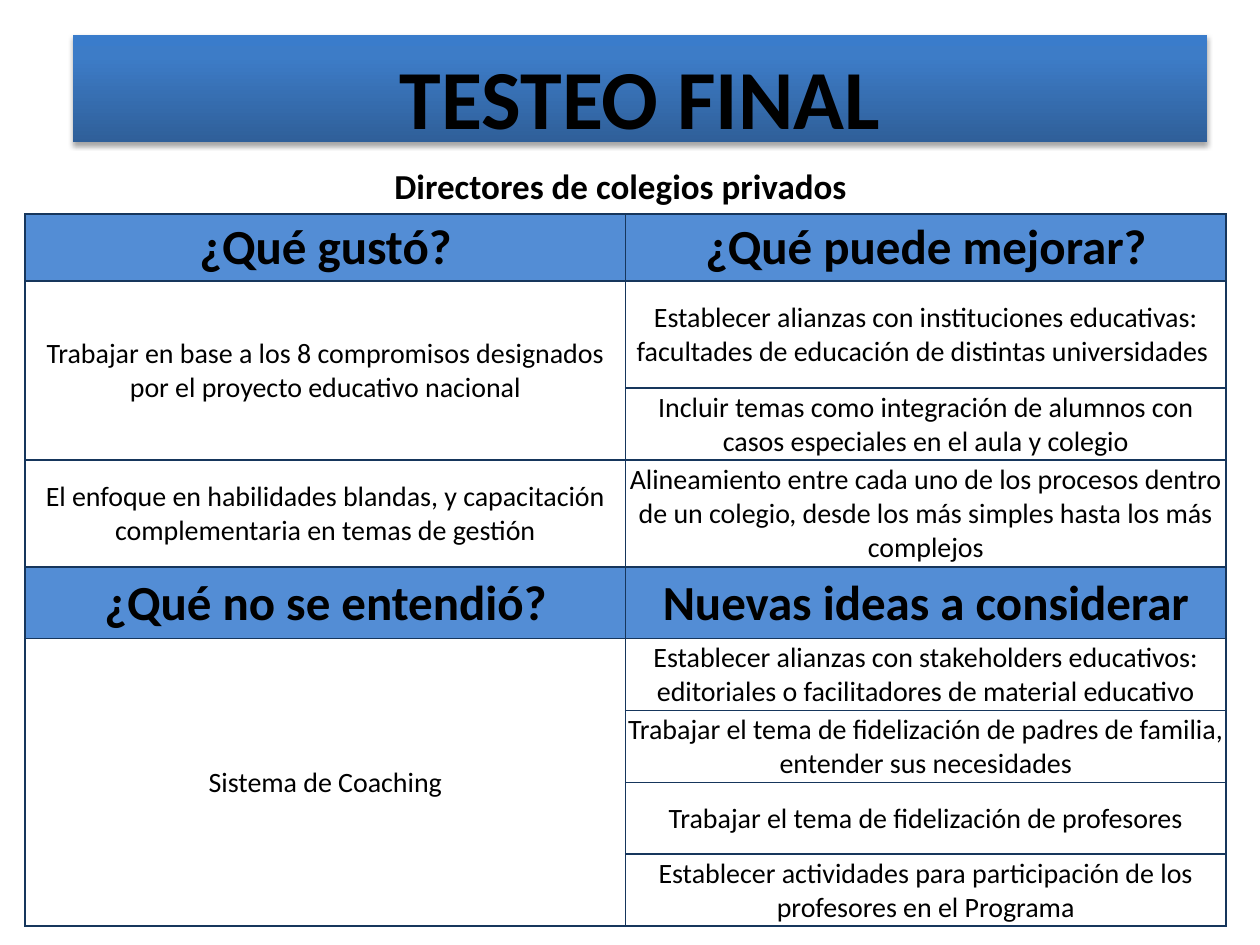
from copy import deepcopy

from lxml.etree import SubElement
from pptx import Presentation
from pptx.dml.color import RGBColor
from pptx.enum.shapes import MSO_SHAPE
from pptx.enum.text import MSO_ANCHOR, PP_ALIGN
from pptx.oxml.ns import qn
from pptx.util import Inches, Pt

COLORS = {"text": "000000", "header": "538DD5", "border": "16365C", "shadow": "000000"}
GRADIENT = [(0, "2F5F99"), (0.8, "3D7CC7"), (1, "3A7CCB")]
TITLE = "TESTEO FINAL"
SUBTITLE = "Directores de colegios privados"
ROWS = [
    ("¿Qué gustó?", "¿Qué puede mejorar?"),
    ("Trabajar en base a los 8 compromisos designados por el proyecto educativo nacional",
     "Establecer alianzas con instituciones educativas: facultades de educación de distintas universidades "),
    (None, "Incluir temas como integración de alumnos con casos especiales en el aula y colegio"),
    ("El enfoque en habilidades blandas, y capacitación complementaria en temas de gestión",
     "Alineamiento entre cada uno de los procesos dentro de un colegio, "
     "desde los más simples hasta los más complejos"),
    ("¿Qué no se entendió?", "Nuevas ideas a considerar"),
    ("Sistema de Coaching",
     "Establecer alianzas con stakeholders educativos: editoriales o facilitadores de material educativo"),
    (None, "Trabajar el tema de fidelización de padres de familia, entender sus necesidades"),
    (None, "Trabajar el tema de fidelización de profesores"),
    (None, "Establecer actividades para participación de los profesores en el Programa"),
]
HEADER_ROWS = {0, 4}
ROW_HEIGHTS = [0.53, 0.85, 0.57, 0.85] + [0.57] * 5
MERGES = [(1, 2), (5, 8)]
COLUMN_WIDTH = 4.765


def write_text(frame, text, size=16, bold=False):
    paragraph = frame.paragraphs[0]
    paragraph.alignment = PP_ALIGN.CENTER
    span = paragraph.add_run()
    span.text = text
    span.font.name = "Calibri"
    span.font.size = Pt(size)
    span.font.bold = bold
    span.font.color.rgb = RGBColor.from_string(COLORS["text"])


def add_color(parent, color):
    fill = SubElement(parent, qn("a:solidFill"))
    SubElement(fill, qn("a:srgbClr"), val=color)


def add_borders(cell):
    properties = cell._tc.get_or_add_tcPr()
    for index, side in enumerate(("lnL", "lnR", "lnT", "lnB")):
        line = properties.makeelement(qn(f"a:{side}"), {"w": str(Pt(1))})
        add_color(line, COLORS["border"])
        properties.insert(index, line)


def add_title(page):
    banner = page.shapes.add_shape(
        MSO_SHAPE.RECTANGLE, Inches(0.58), Inches(0.28), Inches(9), Inches(0.85))
    banner.line.fill.background()
    banner.fill.gradient()
    banner.fill.gradient_angle = 90
    stop_list = banner._element.spPr.find(qn("a:gradFill")).find(qn("a:gsLst"))
    stop_list.append(deepcopy(stop_list[-1]))
    for stop, (position, color) in zip(banner.fill.gradient_stops, GRADIENT):
        stop.position = position
        stop.color.rgb = RGBColor.from_string(color)

    banner.shadow.inherit = False
    effects = banner._element.spPr.find(qn("a:effectLst"))
    shadow = SubElement(effects, qn("a:outerShdw"), blurRad=str(Pt(3.1)),
                        dist=str(Pt(1.8)), dir="5400000", rotWithShape="0")
    shade = SubElement(shadow, qn("a:srgbClr"), val=COLORS["shadow"])
    SubElement(shade, qn("a:alpha"), val="35000")

    frame = banner.text_frame
    frame.vertical_anchor = MSO_ANCHOR.TOP
    frame.margin_top, frame.margin_bottom = Inches(0.08), 0
    write_text(frame, TITLE, size=48, bold=True)


def add_feedback_table(page):
    table = page.shapes.add_table(
        len(ROWS), 2, Inches(0.2), Inches(1.7),
        Inches(2 * COLUMN_WIDTH), Inches(sum(ROW_HEIGHTS))).table
    table.first_row = table.horz_banding = False
    for column in table.columns:
        column.width = Inches(COLUMN_WIDTH)
    for row, height in zip(table.rows, ROW_HEIGHTS):
        row.height = Inches(height)
    for first, last in MERGES:
        table.cell(first, 0).merge(table.cell(last, 0))

    for row_index, texts in enumerate(ROWS):
        is_header = row_index in HEADER_ROWS
        for column_index, text in enumerate(texts):
            cell = table.cell(row_index, column_index)
            cell.vertical_anchor = MSO_ANCHOR.MIDDLE
            cell.margin_left = cell.margin_right = cell.margin_top = Inches(0.01)
            cell.margin_bottom = 0
            if is_header:
                cell.fill.solid()
                cell.fill.fore_color.rgb = RGBColor.from_string(COLORS["header"])
            else:
                cell.fill.background()
            add_borders(cell)
            if text:
                write_text(cell.text_frame, text, size=28 if is_header else 16, bold=is_header)


def main():
    deck = Presentation()
    deck.slide_width, deck.slide_height = Inches(10), Inches(7.5)
    page = deck.slides.add_slide(deck.slide_layouts[6])
    subtitle = page.shapes.add_textbox(Inches(2.64), Inches(1.26), Inches(4.57), Inches(0.44))
    subtitle.text_frame.word_wrap = True
    write_text(subtitle.text_frame, SUBTITLE, size=20, bold=True)
    add_feedback_table(page)
    add_title(page)
    deck.save("out.pptx")


if __name__ == "__main__":
    main()
